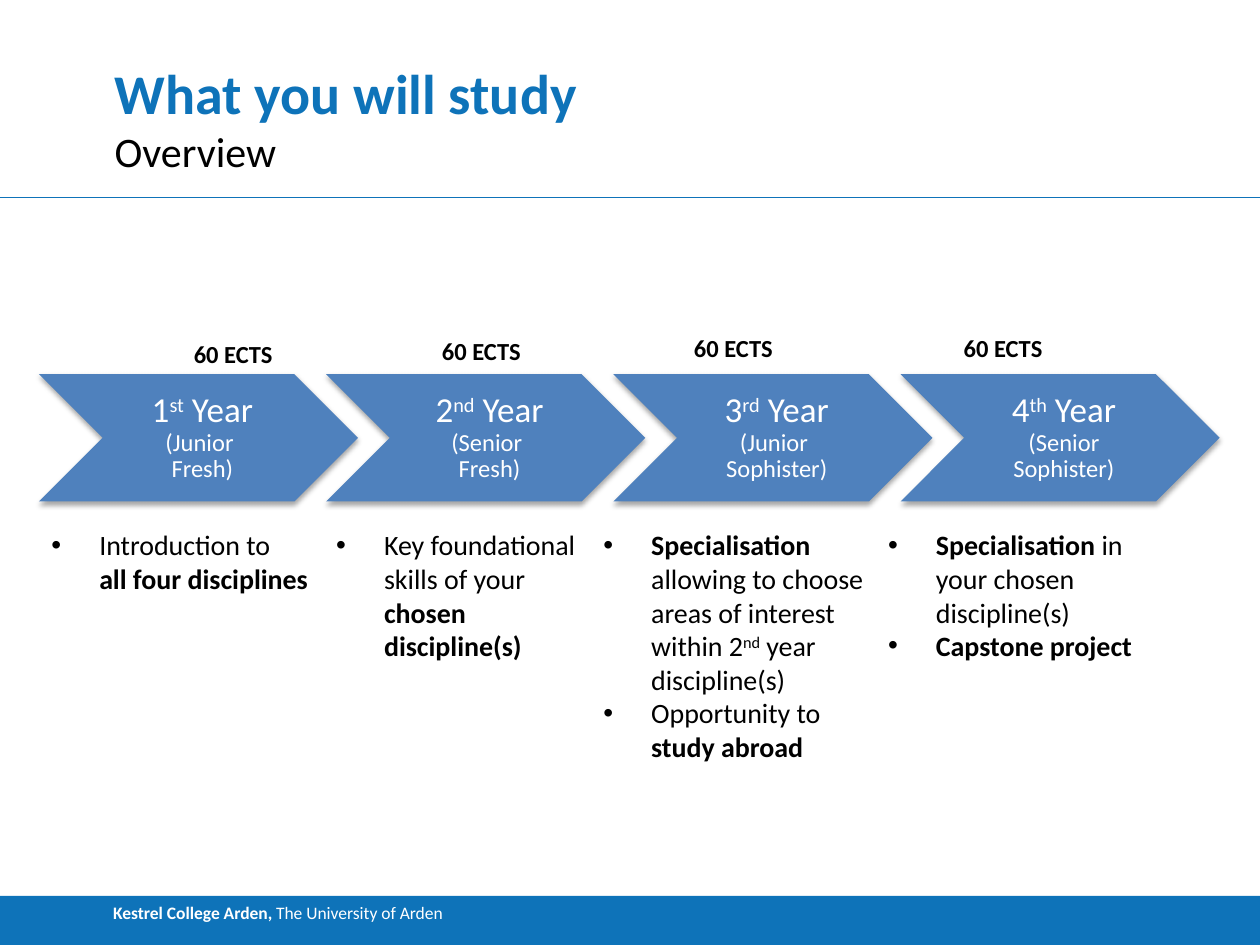
from lxml.etree import SubElement
from pptx import Presentation
from pptx.dml.color import RGBColor
from pptx.enum.shapes import MSO_CONNECTOR, MSO_SHAPE
from pptx.enum.text import MSO_ANCHOR, PP_ALIGN
from pptx.oxml.ns import qn
from pptx.util import Inches, Pt

COLS, ROWS = 100, 75
BLUE, STEEL, WHITE, BLACK = "0E73B9", "4F81BD", "FFFFFF", "000000"
FONT = "Calibri"
PITCH = 0.9

YEARS = [
    {
        "ordinal": ("1", "st"), "stage": "(Junior \vFresh)",
        "credit_at": (14.4, 26.4), "notes_col": 3.1,
        "notes": [[("Introduction to \v", ""), ("all four disciplines", "bold")]],
    },
    {
        "ordinal": ("2", "nd"), "stage": "(Senior \vFresh)",
        "credit_at": (34.1, 26.2), "notes_col": 25.7,
        "notes": [[("Key foundational skills of your ", ""),
                   ("chosen discipline(s)", "bold")]],
    },
    {
        "ordinal": ("3", "rd"), "stage": "(Junior \vSophister)",
        "credit_at": (54.1, 25.9), "notes_col": 46.9,
        "notes": [[("Specialisation", "bold"),
                   (" allowing to choose areas of interest within 2", ""),
                   ("nd", "sup"), (" year discipline(s)", "")],
                  [("Opportunity to ", ""), ("study abroad", "bold")]],
    },
    {
        "ordinal": ("4", "th"), "stage": "(Senior Sophister)",
        "credit_at": (75.5, 25.9), "notes_col": 69.5,
        "notes": [[("Specialisation", "bold"), (" in your chosen discipline(s)", "")],
                  [("Capstone project", "bold")]],
    },
]


def rgb(hex_color):
    """Turn a hex string into a colour."""
    return RGBColor.from_string(hex_color)


def grid(*cells):
    """Turn counts of grid cells into lengths; a cell is a tenth of an inch."""
    return [Inches(c / 10) for c in cells]


def add_runs(p, parts, size, color):
    """Append styled parts to a paragraph, with \\v as a line break."""
    for text, style in parts:
        for i, piece in enumerate(text.split("\v")):
            if i:
                p.add_line_break()
                SubElement(p._p[-1], qn("a:rPr"), sz=str(size * 100))
            if not piece:
                continue
            r = p.add_run()
            r.text = piece
            r.font.name, r.font.size = FONT, Pt(size)
            r.font.bold = style == "bold"
            r.font.color.rgb = rgb(color)
            if style == "sup":
                r.font._element.set("baseline", "30000")


def add_text(s, box, parts, size, color=BLACK, wrap=True, insets=None,
             anchor=MSO_ANCHOR.TOP):
    """Add a text box and return its text frame."""
    tf = s.shapes.add_textbox(*grid(*box)).text_frame
    tf.word_wrap, tf.vertical_anchor = wrap, anchor
    if insets:
        tf.margin_left, tf.margin_top, tf.margin_right, tf.margin_bottom = grid(*insets)
    add_runs(tf.paragraphs[0], parts, size, color)
    return tf


def add_solid(s, kind, box, color):
    """Add a filled shape without outline or shadow."""
    sp = s.shapes.add_shape(kind, *grid(*box))
    sp.shadow.inherit = False
    sp.fill.solid()
    sp.fill.fore_color.rgb = rgb(color)
    sp.line.fill.background()
    return sp


def add_drop_shadow(sp):
    """Give a shape a soft shadow straight below it."""
    effects = sp._element.spPr.find(qn("a:effectLst"))
    outer = SubElement(effects, qn("a:outerShdw"), blurRad=str(Pt(3.1)),
                       dist=str(Pt(1.8)), dir="5400000", rotWithShape="0")
    color = SubElement(outer, qn("a:srgbClr"), val=BLACK)
    SubElement(color, qn("a:alpha"), val="35000")


def add_header(s, box):
    """Place the title, the subtitle and the rule along the box's foot."""
    x, y, w, h = box
    none = (0, 0, 0, 0)
    add_text(s, (x, y, w, 6.1), [("What you will study", "bold")], 32, BLUE,
             insets=none, anchor=MSO_ANCHOR.BOTTOM)
    add_text(s, (x, y + 6.1, w, 3), [("Overview", "")], 24, insets=none)
    rule = s.shapes.add_connector(MSO_CONNECTOR.STRAIGHT,
                                  *grid(0, y + h, COLS, y + h))
    rule.line.color.rgb, rule.line.width = rgb(BLUE), Pt(0.75)
    SubElement(rule._element.spPr, qn("a:effectLst"))


def add_footer(s, box):
    """Place the coloured band with the institution's name."""
    tf = add_solid(s, MSO_SHAPE.RECTANGLE, box, BLUE).text_frame
    tf.vertical_anchor = MSO_ANCHOR.TOP
    p = tf.paragraphs[0]
    p.alignment = PP_ALIGN.LEFT
    p._p.get_or_add_pPr().set("marL", str(Inches(0.8)))
    add_runs(p, [("Kestrel College Arden, ", "bold"),
                 ("The University of Arden", "")], 10, WHITE)


def add_year(s, box, year):
    """Place one chevron with the year and its stage."""
    x, y, w, h = box
    add_drop_shadow(add_solid(s, MSO_SHAPE.CHEVRON, box, STEEL))
    number, suffix = year["ordinal"]
    tf = add_text(s, (x + w / 5, y, w * 3 / 5, h),
                  [(number, ""), (suffix, "sup"), (" Year\v", "")], 20, WHITE,
                  insets=(0.9, 0.3, 0.3, 0.3), anchor=MSO_ANCHOR.MIDDLE)
    p = tf.paragraphs[0]
    p.alignment, p.line_spacing = PP_ALIGN.CENTER, 0.9
    add_runs(p, [(year["stage"], "")], 14, WHITE)


def add_notes(s, box, notes):
    """Place the bulleted notes of one year."""
    tf = add_text(s, box, notes[0], 16)
    for note in notes[1:]:
        add_runs(tf.add_paragraph(), note, 16, BLACK)
    for p in tf.paragraphs:
        pPr = p._p.get_or_add_pPr()
        pPr.set("marL", str(Inches(0.38)))
        pPr.set("indent", str(Inches(-0.38)))
        SubElement(pPr, qn("a:buFont"), typeface="Arial")
        SubElement(pPr, qn("a:buChar"), char="•")


def add_timeline(s, box):
    """Place the four years as equal chevrons with credits and notes."""
    x, y, w, h = box
    step_w = w / (1 + PITCH * (len(YEARS) - 1))
    for i, year in enumerate(YEARS):
        add_year(s, (x + i * PITCH * step_w, y, step_w, h), year)
        add_notes(s, (year["notes_col"], y + h + 1.6, 22.7, 11.8), year["notes"])
        add_text(s, (*year["credit_at"], 8.3, 3.4), [("60 ECTS", "bold")], 14,
                 wrap=False)


def main():
    """Build the slide and save it."""
    prs = Presentation()
    prs.slide_width, prs.slide_height = grid(COLS, ROWS)
    s = prs.slides.add_slide(prs.slide_layouts[6])
    add_footer(s, (0, 71.1, COLS, 3.9))
    add_header(s, (9.1, 3.9, 82, 11.8))
    add_timeline(s, (3.1, 29.7, 93.7, 10.1))
    prs.save("out.pptx")


if __name__ == "__main__":
    main()
